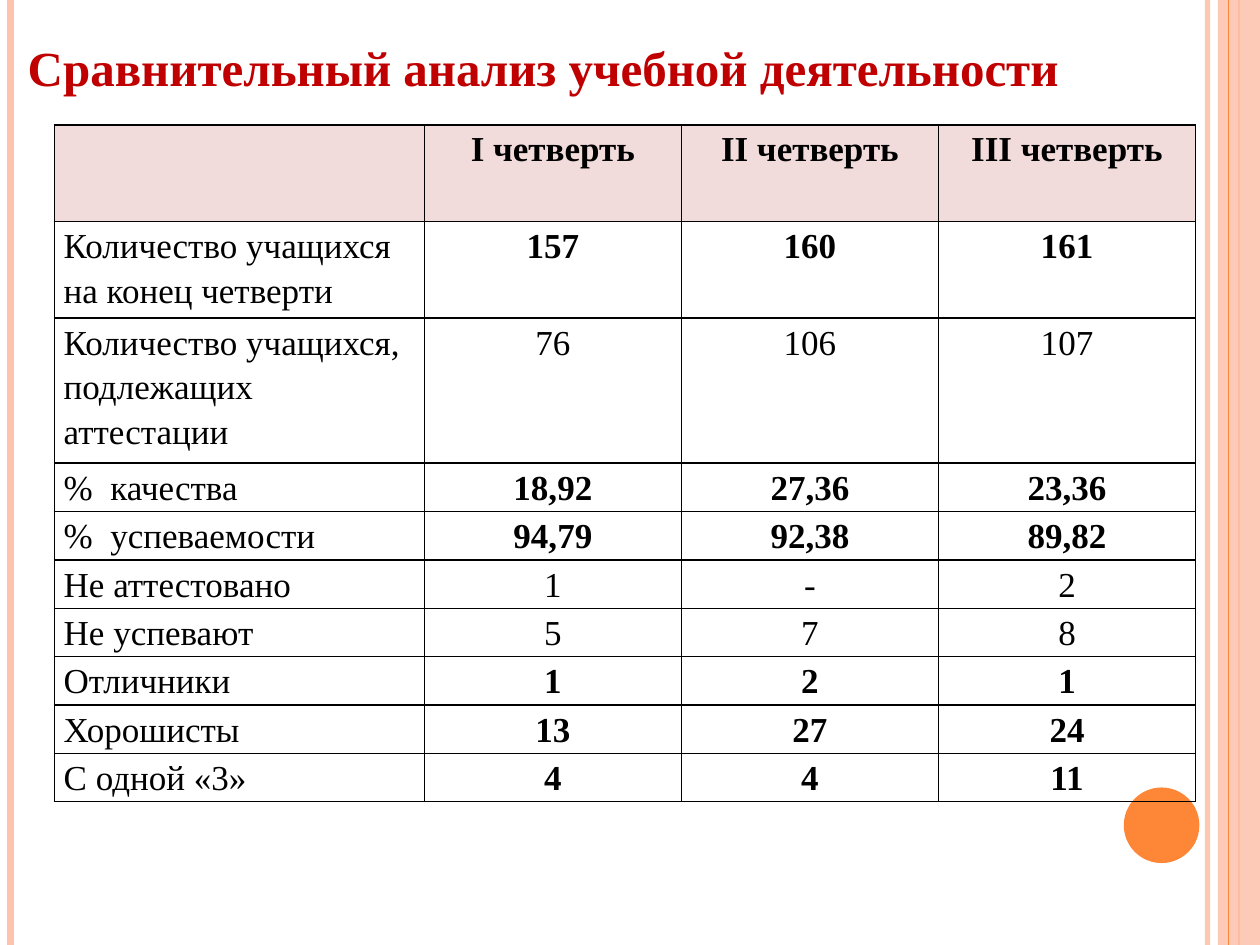
from lxml import etree
from pptx import Presentation
from pptx.dml.color import RGBColor
from pptx.enum import shapes, text
from pptx.oxml import ns
from pptx.util import Pt

COLORS = {"peach": "FEC3AE", "orange": "FE8637", "title": "C00000",
          "head": "F2DBDB", "ink": "000000"}
FONT = "Times New Roman"
SLIDE_W, SLIDE_H = 720, 540
COL_WIDTHS = [211.5, 146.9, 146.9, 146.9]
ROW_UNIT = 27.63  # height of a one-line row

# lines of height, bold values, texts
ROWS = [
    (2, True, ["", "I четверть", "II четверть", "III четверть"]),
    (2, True, ["Количество учащихся на конец четверти", "157", "160", "161"]),
    (3, False, ["Количество учащихся,\nподлежащих аттестации", "76", "106", "107"]),
    (1, True, ["%  качества", "18,92", "27,36", "23,36"]),
    (1, True, ["%  успеваемости", "94,79", "92,38", "89,82"]),
    (1, False, ["Не аттестовано", "1", "-", "2"]),
    (1, False, ["Не успевают", "5", "7", "8"]),
    (1, True, ["Отличники", "1", "2", "1"]),
    (1, True, ["Хорошисты", "13", "27", "24"]),
    (1, True, ["С одной «3»", "4", "4", "11"]),
]


def rgb(name):
    return RGBColor.from_string(COLORS[name])


def set_attrs(obj, values):
    for key, value in values.items():
        setattr(obj, key, value)


def style_run(r, size, color, bold):
    set_attrs(r.font, {"name": FONT, "size": Pt(size), "bold": bold})
    r.font.color.rgb = rgb(color)


def set_alpha(parent, percent):
    clr = parent.find(".//" + ns.qn("a:srgbClr"))
    etree.SubElement(clr, ns.qn("a:alpha"), val=str(percent * 1000))


def add_stripe(s, x, top, height, color, width, alpha=None):
    line = s.shapes.add_connector(shapes.MSO_CONNECTOR.STRAIGHT,
                                  Pt(x), Pt(top), Pt(x), Pt(top + height))
    line.line.color.rgb = rgb(color)
    line.line.width = Pt(width)
    if alpha:
        set_alpha(line._element.spPr, alpha)
    etree.SubElement(line._element.spPr, ns.qn("a:effectLst"))


def add_solid(s, kind, left, top, width, height, color, alpha=None):
    sp = s.shapes.add_shape(kind, Pt(left), Pt(top), Pt(width), Pt(height))
    sp.shadow.inherit = False
    sp.fill.solid()
    sp.fill.fore_color.rgb = rgb(color)
    sp.line.fill.background()
    if alpha:
        set_alpha(sp._element.spPr, alpha)


def add_decoration(s, left, top, width, height):
    right = left + width
    add_stripe(s, right - 30, top, height, "peach", 3, 93)
    add_stripe(s, left + 6, top, height, "peach", 4.5)
    add_stripe(s, right - 12, top, height, "orange", 1.5)
    add_solid(s, shapes.MSO_SHAPE.RECTANGLE, right - 24, top, 24, height, "peach", 87)
    add_stripe(s, right - 18, top, height, "orange", 0.75)
    add_solid(s, shapes.MSO_SHAPE.OVAL, right - 77.8, top + 450, 43.2, 43.2, "orange")


def add_title(s, left, top, width, height):
    tf = s.shapes.add_textbox(Pt(left), Pt(top), Pt(width), Pt(height)).text_frame
    set_attrs(tf, {"word_wrap": True, "vertical_anchor": text.MSO_ANCHOR.TOP})
    r = tf.paragraphs[0].add_run()
    r.text = "Сравнительный анализ учебной деятельности"
    style_run(r, 28, "title", True)


def add_borders(cell):
    tc_pr = cell._tc.get_or_add_tcPr()
    for i, side in enumerate(("lnL", "lnR", "lnT", "lnB")):
        ln = etree.Element(ns.qn("a:" + side), w=str(Pt(1)))
        fill = etree.SubElement(ln, ns.qn("a:solidFill"))
        etree.SubElement(fill, ns.qn("a:srgbClr"), val=COLORS["ink"])
        tc_pr.insert(i, ln)


def fill_cell(cell, content, bold, align, head):
    set_attrs(cell, {"margin_left": Pt(5.4), "margin_right": Pt(5.4),
                     "margin_top": 0, "margin_bottom": 0})
    if head:
        cell.fill.solid()
        cell.fill.fore_color.rgb = rgb("head")
    else:
        cell.fill.background()
    add_borders(cell)
    cell.text = content
    for p in cell.text_frame.paragraphs:
        set_attrs(p, {"alignment": align, "line_spacing": 1.15})
        for r in p.runs:
            style_run(r, 20, "ink", bold)


def add_results_table(s, left, top):
    height = ROW_UNIT * sum(lines for lines, _, _ in ROWS)
    table = s.shapes.add_table(len(ROWS), len(COL_WIDTHS), Pt(left), Pt(top),
                               Pt(sum(COL_WIDTHS)), Pt(height)).table
    set_attrs(table, {"first_row": False, "horz_banding": False})
    for col, width in zip(table.columns, COL_WIDTHS):
        col.width = Pt(width)
    for i, (lines, bold, texts) in enumerate(ROWS):
        table.rows[i].height = Pt(ROW_UNIT * lines)
        for j, content in enumerate(texts):
            align = text.PP_ALIGN.CENTER if j else text.PP_ALIGN.LEFT
            fill_cell(table.cell(i, j), content, bold and j > 0, align, i == 0)


def main():
    prs = Presentation()
    set_attrs(prs, {"slide_width": Pt(SLIDE_W), "slide_height": Pt(SLIDE_H)})
    s = prs.slides.add_slide(prs.slide_layouts[6])
    add_decoration(s, 0, 0, SLIDE_W, SLIDE_H)
    add_title(s, 8.8, 18, 617, 75)
    add_results_table(s, 31, 71.3)
    prs.save("out.pptx")


if __name__ == "__main__":
    main()
